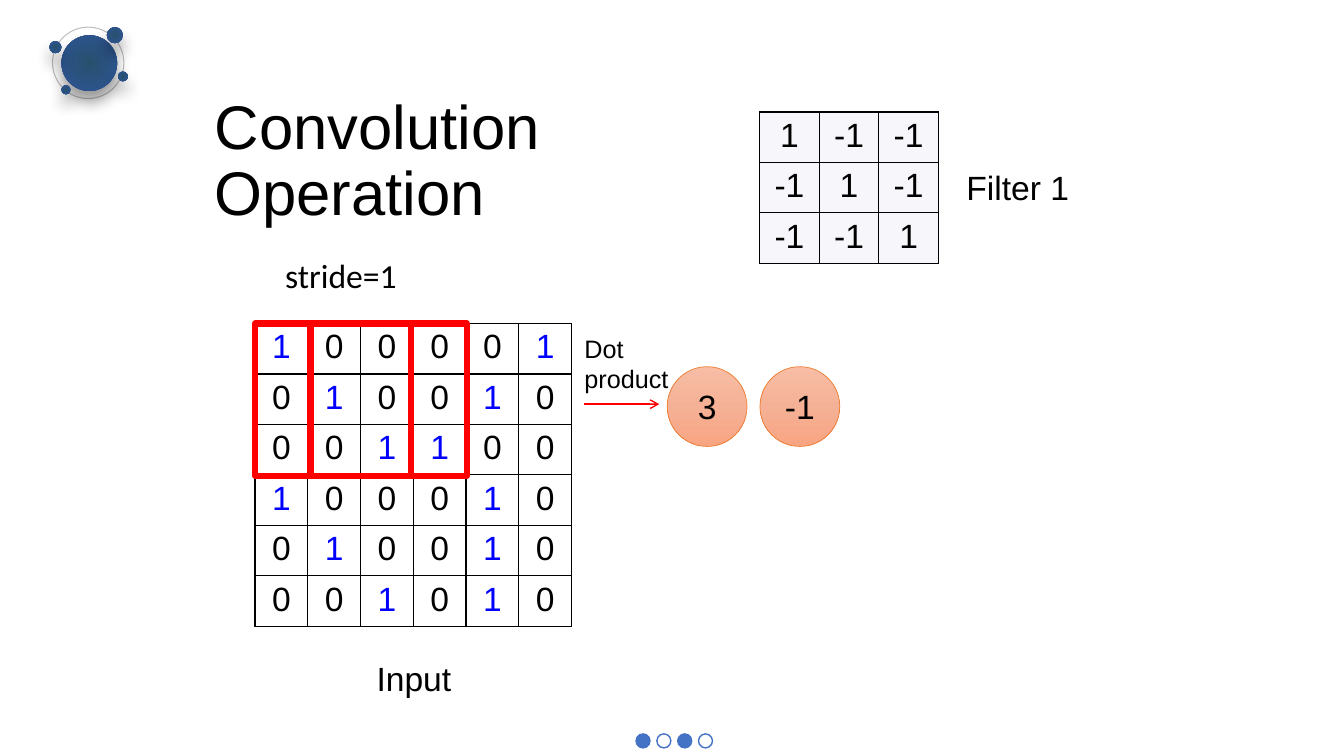
from lxml import etree
from pptx import Presentation
from pptx import util as u
from pptx.dml.color import RGBColor
from pptx.enum import shapes, text
from pptx.oxml import ns, parse_xml

BLACK = RGBColor(0x00, 0x00, 0x00)
BLUE = RGBColor(0x00, 0x00, 0xFF)
RED = RGBColor(0xFF, 0x00, 0x00)
ORANGE = RGBColor(0xED, 0x7D, 0x31)
DOT_BLUE = RGBColor(0x44, 0x72, 0xC4)
RING_GREY = RGBColor(0xBF, 0xBF, 0xBF)
FILTER_FILL = RGBColor(0xF7, 0xF7, 0xFB)
ORB_STOPS = [(0, RGBColor(0x27, 0x50, 0x6E)), (100, RGBColor(0x2F, 0x55, 0x97))]
RESULT_STOPS = [(0, RGBColor(0xF7, 0xBD, 0xA5)), (50, RGBColor(0xF5, 0xB1, 0x96)),
                (100, RGBColor(0xF8, 0xA5, 0x82))]
LINEAR = '<a:lin ang="5400000" scaled="0"/>'
RADIAL = '<a:path path="circle"><a:fillToRect l="50000" t="50000" r="50000" b="50000"/></a:path>'

INPUT_IMAGE = ["100001", "010010", "001100", "100010", "010010", "001010"]
FILTER = [["1" if row == column else "-1" for column in range(3)] for row in range(3)]


def drawing_xml(tag, body="", attributes=""):
    """Return a DrawingML element with the given content."""
    return parse_xml(f'<a:{tag} {ns.nsdecls("a")} {attributes}>{body}</a:{tag}>')


def set_gradient(shape, stops, direction):
    """Fill a shape with a gradient."""
    shape.fill.background()
    no_fill = shape._element.spPr.find(ns.qn("a:noFill"))
    marks = "".join(f'<a:gs pos="{place * 1000}"><a:srgbClr val="{color}"/></a:gs>'
                    for place, color in stops)
    no_fill.getparent().replace(
        no_fill, drawing_xml("gradFill", f"<a:gsLst>{marks}</a:gsLst>{direction}"))


def set_shadow(shape):
    """Give a shape a soft shadow below it."""
    effects = shape._element.spPr.find(ns.qn("a:effectLst"))
    effects.append(drawing_xml(
        "outerShdw", '<a:srgbClr val="000000"><a:alpha val="40000"/></a:srgbClr>',
        'blurRad="139700" dist="101600" dir="5400000" algn="t" rotWithShape="0"'))


def add_outline(slide, kind, box, color=None, width=1, fill=None):
    """Add a preset shape with an optional solid fill and line."""
    shape = slide.shapes.add_shape(kind, *map(u.Pt, box))
    shape.shadow.inherit = False
    if fill is None:
        shape.fill.background()
    else:
        shape.fill.solid()
        shape.fill.fore_color.rgb = fill
    if color is None:
        shape.line.fill.background()
    else:
        shape.line.color.rgb = color
        shape.line.width = u.Pt(width)
    return shape


def write_text(frame, lines, align=text.PP_ALIGN.LEFT, spacing=None, color=BLACK, **font):
    """Write lines as paragraphs in one format."""
    values = {"name": "Arial", "size": u.Pt(24), **font}
    for index, line in enumerate(lines):
        paragraph = frame.add_paragraph() if index else frame.paragraphs[0]
        paragraph.alignment = align
        if spacing:
            paragraph.line_spacing = spacing
        run = paragraph.add_run()
        run.text = line
        run.font.color.rgb = color
        for name, value in values.items():
            setattr(run.font, name, value)


def add_label(slide, box, lines, wrap=True, anchor=text.MSO_ANCHOR.TOP, **formats):
    """Add a text box."""
    frame = slide.shapes.add_textbox(*map(u.Pt, box)).text_frame
    frame.word_wrap = wrap
    frame.vertical_anchor = anchor
    write_text(frame, lines, **formats)


def add_matrix(slide, box, rows, fill=None, highlight=BLACK):
    """Add a bordered number grid in which ones take the highlight colour."""
    left, top, width, height = box
    table = slide.shapes.add_table(len(rows), len(rows[0]), *map(u.Pt, box)).table
    table.first_row = table.horz_banding = False
    for column in table.columns:
        column.width = u.Pt(width / len(rows[0]))
    for row, values in zip(table.rows, rows):
        row.height = u.Pt(height / len(rows))
        for cell, value in zip(row.cells, values):
            properties = cell._tc.get_or_add_tcPr()
            for side in "LRTB":
                properties.append(drawing_xml(
                    f"ln{side}", f'<a:solidFill><a:srgbClr val="{BLACK}"/></a:solidFill>', 'w="12700"'))
            if fill is None:
                cell.fill.background()
            else:
                cell.fill.solid()
                cell.fill.fore_color.rgb = fill
            write_text(cell.text_frame, [value], text.PP_ALIGN.CENTER,
                       color=highlight if value == "1" else BLACK)


def add_ornament(slide, left, top):
    """Draw the ring with its orbs."""
    oval = shapes.MSO_SHAPE.OVAL
    add_outline(slide, oval, (left + 2.2, top, 51, 51), RING_GREY, 0.75)
    for x, y, size in [(8.6, 5.8, 39.8), (41, 0, 11.5), (0, 10, 8.6), (8.6, 41.5, 6.5), (49, 31.7, 7)]:
        orb = add_outline(slide, oval, (left + x, top + y, size, size))
        set_gradient(orb, ORB_STOPS, RADIAL)
        set_shadow(orb)


def add_page_dots(slide, left, top):
    """Draw the row of alternating dots."""
    for index in range(4):
        add_outline(slide, shapes.MSO_SHAPE.OVAL, (left + 14.88 * index, top, 10, 10),
                    DOT_BLUE, 1, None if index % 2 else DOT_BLUE)


def add_filter(slide, left, top):
    """Place the filter grid and its name."""
    add_matrix(slide, (left, top, 127.8, 108), FILTER, FILTER_FILL)
    add_label(slide, (left + 127.5, top + 36, 113.8, 36.7), ["Filter 1"], align=text.PP_ALIGN.CENTER)


def add_input(slide, left, top):
    """Place the input grid, its labels and the two window positions."""
    add_matrix(slide, (left, top, 226.2, 204.4), INPUT_IMAGE, highlight=BLUE)
    add_label(slide, (left + 21, top + 235.4, 185, 36), ["Input"], align=text.PP_ALIGN.CENTER)
    add_label(slide, (left + 14.4, top - 52.5, 95, 36.7), ["stride=1"], wrap=False, name="Calibri")
    for offset in (0, 39.6):
        add_outline(slide, shapes.MSO_SHAPE.RECTANGLE, (left + offset, top, 111.6, 108.7), RED, 4.5)


def add_dot_product(slide, left, top):
    """Place the arrow, its label and the results."""
    for index, value in enumerate(["3", "-1"]):
        result = add_outline(slide, shapes.MSO_SHAPE.OVAL,
                             (left + 66.2 + 66.24 * index, top + 27.2, 57, 57), ORANGE, 0.5)
        set_gradient(result, RESULT_STOPS, LINEAR)
        result.text_frame.vertical_anchor = text.MSO_ANCHOR.MIDDLE
        write_text(result.text_frame, [value], text.PP_ALIGN.CENTER)
    arrow = slide.shapes.add_connector(
        shapes.MSO_CONNECTOR.STRAIGHT, *map(u.Pt, (left + 6.5, top + 54, left + 60.5, top + 54)))
    arrow.line.color.rgb = RED
    arrow.line.width = u.Pt(1)
    line = arrow._element.spPr.find(ns.qn("a:ln"))
    etree.SubElement(line, ns.qn("a:tailEnd"), type="arrow")
    etree.SubElement(arrow._element.spPr, ns.qn("a:effectLst"))
    add_label(slide, (left, top, 75, 51), ["Dot", "product"], wrap=False, size=u.Pt(18))


def main():
    """Build and save the slide."""
    presentation = Presentation()
    presentation.slide_width, presentation.slide_height = u.Pt(960), u.Pt(540)
    slide = presentation.slides.add_slide(presentation.slide_layouts[6])
    add_ornament(slide, 35.3, 19.4)
    add_page_dots(slide, 454.3, 524.2)
    add_label(slide, (146.2, 64, 262.8, 104.4), ["Convolution", "Operation"],
              anchor=text.MSO_ANCHOR.MIDDLE, spacing=0.9, size=u.Pt(44))
    add_filter(slide, 542.6, 80)
    add_input(slide, 182.2, 231.1)
    add_dot_product(slide, 410.4, 234.7)
    presentation.save("out.pptx")


if __name__ == "__main__":
    main()
